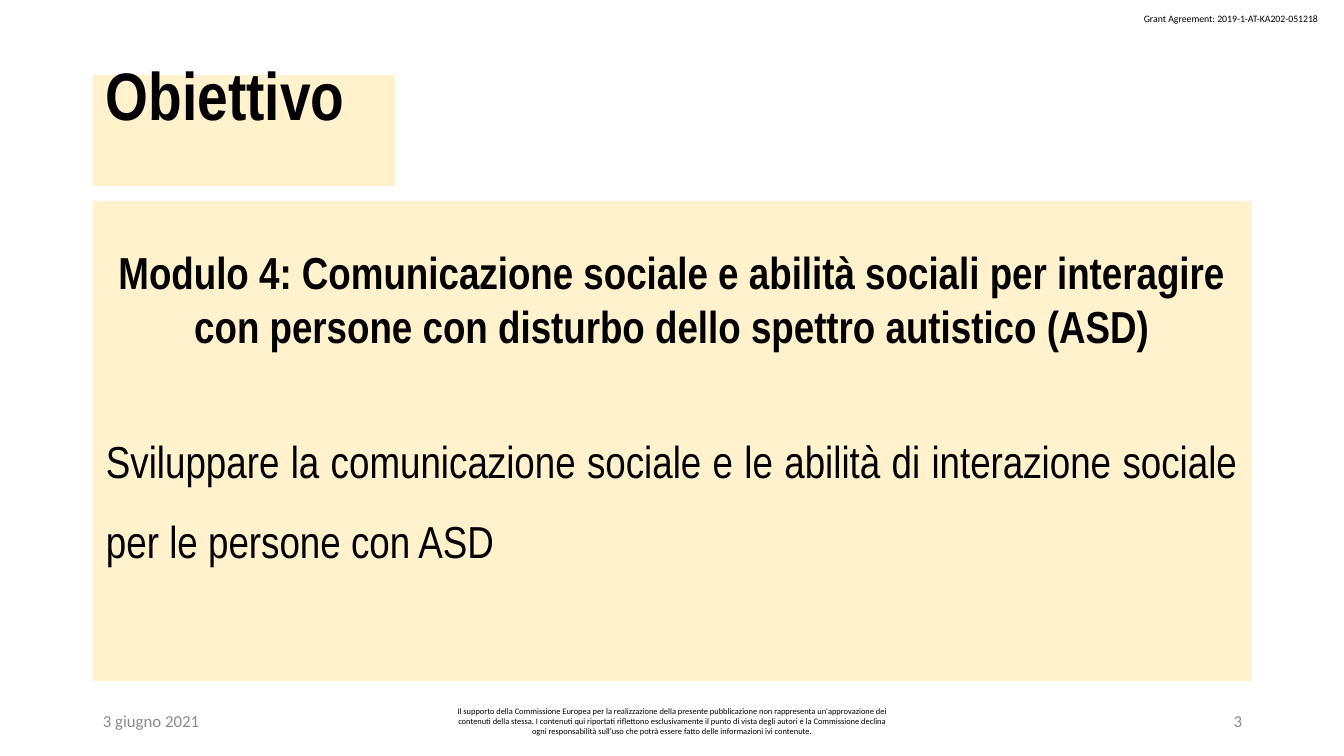
from lxml.etree import SubElement
from pptx import Presentation
from pptx.dml.color import RGBColor
from pptx.enum.text import MSO_ANCHOR as Anchor, MSO_AUTO_SIZE as AutoSize, PP_ALIGN as Align
from pptx.oxml.ns import qn
from pptx.util import Emu, Pt

EMU_PER_PX = 914400 / 100.8
CREAM, BLACK, GREY = "FFF2CC", "000000", "8C8C8C"
HEADING_FONT, SMALL_FONT = "Arial Narrow", "Calibri"
FOOTER_TOP, FOOTER_HEIGHT = 701, 40

DISCLAIMER = (
    "Il supporto della Commissione Europea per la realizzazione della presente "
    "pubblicazione non rappresenta un'approvazione dei contenuti della stessa. "
    "I contenuti qui riportati riflettono esclusivamente il punto di vista degli autori "
    "e la Commissione declina ogni responsabilità sull’uso che potrà essere fatto "
    "delle informazioni ivi contenute."
)
MODULE = (
    "Modulo 4: Comunicazione sociale e abilità sociali per interagire "
    "con persone con disturbo dello spettro autistico (ASD)"
)
GOAL = (
    "Sviluppare la comunicazione sociale e le abilità di interazione sociale "
    "per le persone con ASD"
)


def px(length):
    return Emu(round(length * EMU_PER_PX))


def color(hex_string):
    return RGBColor.from_string(hex_string)


def add_run(paragraph, text, size, font=HEADING_FONT, ink=BLACK, bold=False):
    run = paragraph.add_run()
    run.text = text
    run.font.size = Pt(size)
    run.font.name = font
    run.font.bold = bold
    run.font.color.rgb = color(ink)


def remove_bullet(paragraph):
    properties = paragraph._p.get_or_add_pPr()
    properties.set("marL", "0")
    properties.set("indent", "0")
    SubElement(properties, qn("a:buNone"))


def format_panel(placeholder, box, insets, anchor):
    """Move a placeholder, fill it cream and return its emptied text frame."""
    placeholder.left, placeholder.top, placeholder.width, placeholder.height = map(px, box)
    placeholder.fill.solid()
    placeholder.fill.fore_color.rgb = color(CREAM)
    frame = placeholder.text_frame
    frame.word_wrap = True
    frame.auto_size = AutoSize.NONE
    frame.vertical_anchor = anchor
    frame.margin_left, frame.margin_top, frame.margin_right, frame.margin_bottom = map(px, insets)
    return frame


def add_small_text(slide, box, text, size, ink=BLACK, align=Align.LEFT,
                   anchor=Anchor.MIDDLE, wrap=True):
    frame = slide.shapes.add_textbox(*map(px, box)).text_frame
    frame.word_wrap = wrap
    frame.vertical_anchor = anchor
    paragraph = frame.paragraphs[0]
    paragraph.alignment = align
    add_run(paragraph, text, size, SMALL_FONT, ink)


def fill_title(slide):
    frame = format_panel(slide.shapes.title, (93, 75, 302, 111), (13, 7, 13, 80), Anchor.MIDDLE)
    paragraph = frame.paragraphs[0]
    paragraph.alignment = Align.LEFT
    add_run(paragraph, "Obiettivo", 48, bold=True)


def fill_body(slide):
    frame = format_panel(slide.placeholders[1], (93, 201, 1159, 480), (13, 44, 13, 7), Anchor.TOP)
    module, goal = frame.paragraphs[0], frame.add_paragraph()
    for paragraph in (module, goal):
        remove_bullet(paragraph)
    module.alignment = Align.CENTER
    module.space_before = Pt(0)
    add_run(module, MODULE, 32, bold=True)
    goal.alignment = Align.JUSTIFY
    goal.line_spacing = 1.5
    goal.space_before = Pt(38.5)
    add_run(goal, GOAL, 32)


def add_footer(slide):
    for left, width, text, size, ink, align in (
        (93, 302, "3 giugno 2021", 12, GREY, Align.LEFT),
        (445, 454, DISCLAIMER, 6, BLACK, Align.CENTER),
        (950, 302, "3", 12, GREY, Align.RIGHT),
    ):
        add_small_text(slide, (left, FOOTER_TOP, width, FOOTER_HEIGHT), text, size, ink, align)


def main():
    presentation = Presentation()
    presentation.slide_width, presentation.slide_height = px(1344), px(756)
    slide = presentation.slides.add_slide(presentation.slide_layouts[1])
    fill_title(slide)
    fill_body(slide)
    add_small_text(slide, (1134, 8, 199, 22), "Grant Agreement: 2019-1-AT-KA202-051218", 7,
                   anchor=Anchor.TOP, wrap=False)
    add_footer(slide)
    presentation.save("out.pptx")


if __name__ == "__main__":
    main()
